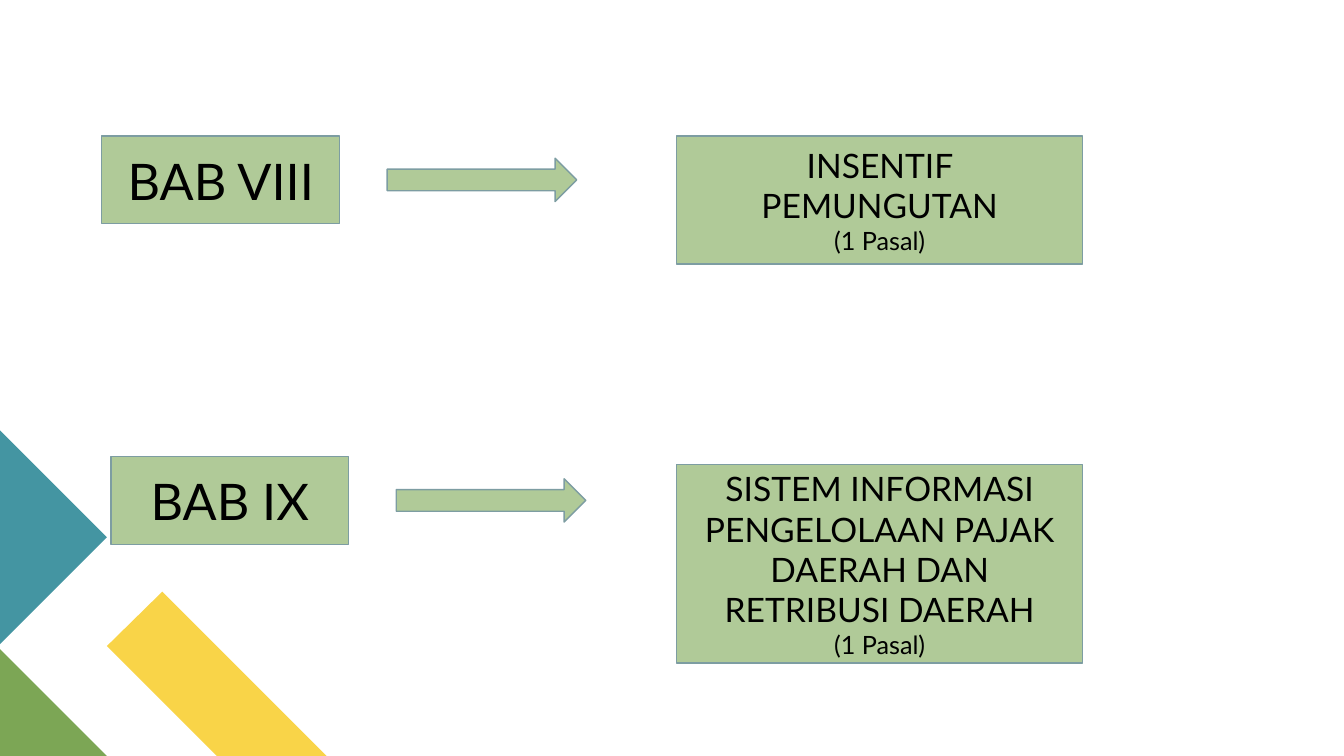
from pptx import Presentation
from pptx.dml.color import RGBColor
from pptx.enum.shapes import MSO_SHAPE as Shape
from pptx.enum.text import MSO_ANCHOR as Anchor, PP_ALIGN as Align
from pptx.util import Inches, Pt


def colour(hex_string):
    return RGBColor.from_string(hex_string)


class ChapterSlide:
    """Holds the style and the current slide."""
    font = "Lato"
    text_colour = "000000"
    fill = "B0CA98"
    outline = "7D9DA2"

    def __init__(self, presentation):
        self.slide = presentation.slides.add_slide(presentation.slide_layouts[6])

    def decoration(self, points, fill):
        corners = [(Inches(x), Inches(y)) for x, y in points]
        builder = self.slide.shapes.build_freeform(*corners[0])
        builder.add_line_segments(corners[1:], close=True)
        shape = builder.convert_to_shape()
        shape.shadow.inherit = False
        shape.fill.solid()
        shape.fill.fore_color.rgb = colour(fill)
        shape.line.fill.background()

    def block(self, kind, left, top, width, height):
        shape = self.slide.shapes.add_shape(
            kind, Inches(left), Inches(top), Inches(width), Inches(height))
        shape.shadow.inherit = False
        shape.fill.solid()
        shape.fill.fore_color.rgb = colour(self.fill)
        shape.line.color.rgb = colour(self.outline)
        shape.line.width = Pt(1)
        return shape

    def arrow(self, left, top):
        self.block(Shape.RIGHT_ARROW, left, top, 1.88, 0.43)

    def box(self, left, top, width, height, lines):
        """Draw a box; lines is a list of (text, size) pairs."""
        frame = self.block(Shape.RECTANGLE, left, top, width, height).text_frame
        frame.word_wrap = True
        frame.vertical_anchor = Anchor.MIDDLE
        frame.text = "\n".join(text for text, _ in lines)
        for paragraph, (_, size) in zip(frame.paragraphs, lines):
            paragraph.alignment = Align.CENTER
            font = paragraph.runs[0].font
            font.name = self.font
            font.size = Pt(size)
            font.color.rgb = colour(self.text_colour)


def main():
    presentation = Presentation()
    presentation.slide_width = Inches(13.33)
    presentation.slide_height = Inches(7.5)
    slide = ChapterSlide(presentation)

    # Corner decoration
    slide.decoration([(3.24, 7.5), (2.15, 7.5), (1.06, 6.41), (1.61, 5.87)], "F9D448")
    slide.decoration([(1.06, 7.5), (0, 7.5), (0, 6.44)], "7CA655")
    slide.decoration([(0, 4.27), (1.06, 5.33), (0, 6.39)], "4495A2")

    # Chapters: name, left, top, subject, subject top, subject height
    chapters = [
        ("BAB VIII", 1.01, 1.35, "INSENTIF PEMUNGUTAN", 1.35, 1.27),
        ("BAB IX", 1.1, 4.53,
         "SISTEM INFORMASI PENGELOLAAN PAJAK DAERAH DAN RETRIBUSI DAERAH", 4.61, 1.97),
    ]
    for name, left, top, subject, subject_top, subject_height in chapters:
        slide.box(left, top, 2.36, 0.87, [(name, 36)])
        slide.arrow(left + 2.83, top + 0.22)
        slide.box(6.71, subject_top, 4.03, subject_height,
                  [(subject, 24), ("(1 Pasal)", 18)])

    presentation.save("out.pptx")


if __name__ == "__main__":
    main()
